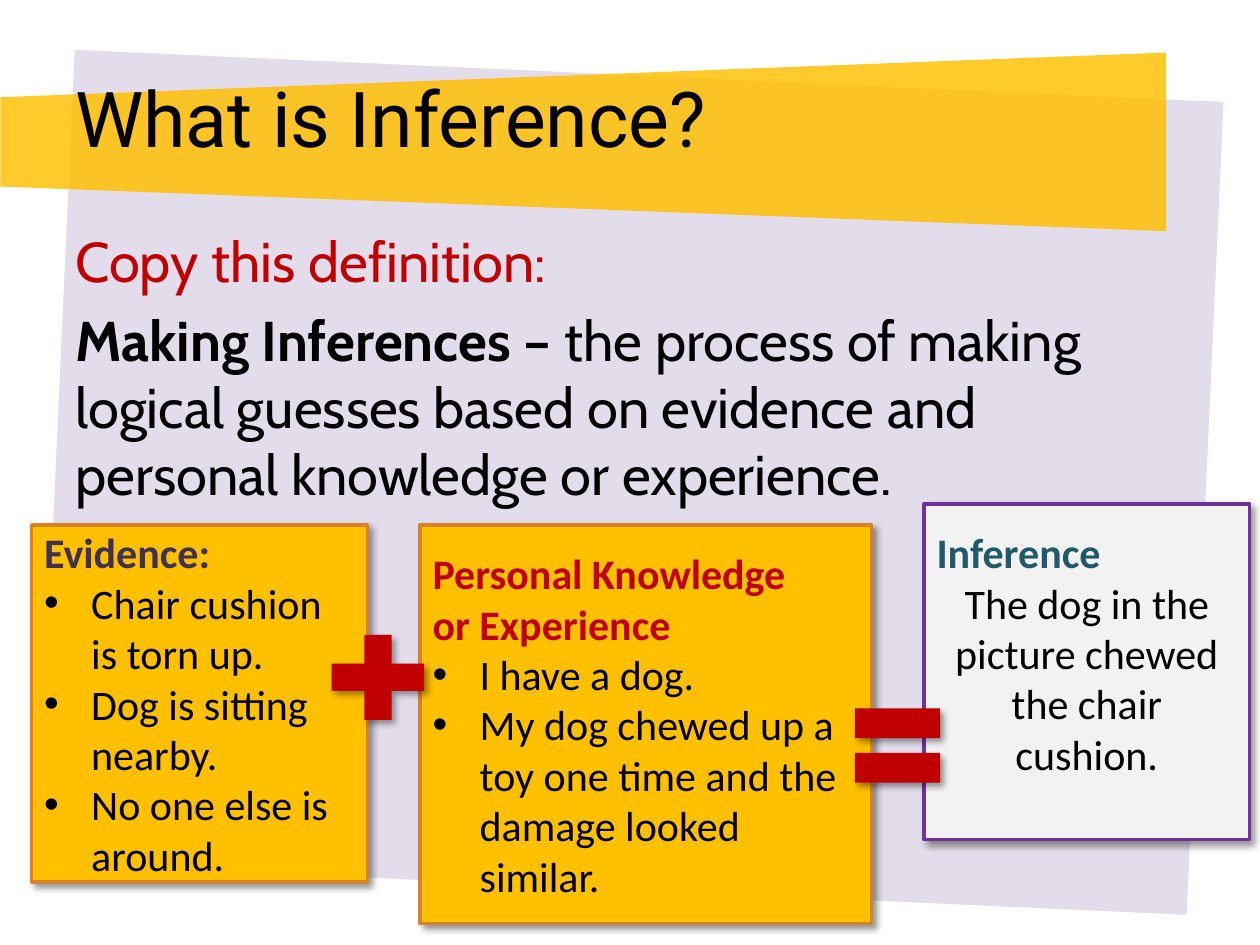
"""Build a slide that defines inference as evidence plus personal knowledge."""
from lxml import etree
from pptx import Presentation
from pptx.dml.color import RGBColor
from pptx.enum import shapes, text
from pptx.oxml import ns
from pptx.util import Cm, Pt

BLACK = RGBColor(0x00, 0x00, 0x00)
WHITE = RGBColor(0xFF, 0xFF, 0xFF)
LILAC = RGBColor(0xCC, 0xC1, 0xDA)
GOLD = RGBColor(0xFF, 0xC0, 0x00)
ORANGE = RGBColor(0xD5, 0x83, 0x29)
RED = RGBColor(0xC0, 0x00, 0x00)
PLUM = RGBColor(0x40, 0x31, 0x52)
PURPLE = RGBColor(0x70, 0x30, 0xA0)
TEAL = RGBColor(0x21, 0x59, 0x68)
PALE = RGBColor(0xF2, 0xF2, 0xF2)

SHAPE = shapes.MSO_SHAPE
LEFT, CENTER = text.PP_ALIGN.LEFT, text.PP_ALIGN.CENTER

TITLE = "What is Inference?"
PROMPT = "Copy this definition:"
TERM = "Making Inferences – "
MEANING = ("the process of making logical guesses based on evidence "
           "and personal knowledge or experience.")
CARDS = [
    dict(place=(0.64, 10.58, 6.77, 7.2), fill=GOLD, line=ORANGE, color=PLUM,
         heading=["Evidence:"], bullets=True, bottom=0.13,
         body=["Chair cushion is torn up.", "Dog is sitting nearby.",
               "No one else is around."]),
    dict(place=(8.47, 10.58, 9.1, 8.04), fill=GOLD, line=ORANGE, color=RED,
         heading=["Personal Knowledge", "or Experience"], bullets=True, bottom=0.13,
         body=["I have a dog.",
               "My dog chewed up a toy one time and the damage looked similar."]),
    dict(place=(18.63, 10.16, 6.56, 6.77), fill=PALE, line=PURPLE, color=TEAL,
         heading=["Inference"], bullets=False, bottom=0.9,
         body=["The dog in the picture chewed the chair cushion."]),
]
SIGNS = [(SHAPE.MATH_PLUS, (6.35, 12.49, 2.54, 2.33)),
         (SHAPE.MATH_EQUAL, (16.93, 13.76, 2.33, 2.54))]


def add_child(parent, tag, **attributes):
    return etree.SubElement(parent, ns.qn(tag), attributes)


def add_figure(page, kind, place, fill, line=None, width=2, opacity=None, shadow=False):
    figure = page.shapes.add_shape(kind, *map(Cm, place))
    figure.shadow.inherit = False
    figure.fill.solid()
    figure.fill.fore_color.rgb = fill
    properties = figure._element.spPr
    if opacity:
        color = properties.find(ns.qn("a:solidFill"))[0]
        add_child(color, "a:alpha", val=str(opacity * 1000))
    if line is None:
        figure.line.fill.background()
    else:
        figure.line.color.rgb = line
        figure.line.width = Pt(width)
    if shadow:
        effect = add_child(properties.find(ns.qn("a:effectLst")), "a:outerShdw",
                           blurRad=str(Pt(4)), dist=str(Pt(3)), dir=str(45 * 60000),
                           algn="tl", rotWithShape="0")
        add_child(add_child(effect, "a:srgbClr", val=str(BLACK)), "a:alpha", val="40000")
    return figure


def add_box(page, place, anchor):
    frame = page.shapes.add_textbox(*map(Cm, place)).text_frame
    frame.word_wrap = True
    frame.vertical_anchor = anchor
    return frame


def set_font(para, name, size, color, bold=False):
    para.font.name = name
    para.font.size = Pt(size)
    para.font.color.rgb = color
    para.font.bold = bold


def add_bullet(para):
    properties = para._p.get_or_add_pPr()
    properties.set("marL", str(Cm(0.95)))
    properties.set("indent", str(Cm(-0.95)))
    add_child(properties, "a:buFont", typeface="Arial")
    add_child(properties, "a:buChar", char="•")


def add_card(page, place, fill, line, color, heading, body, bullets, bottom):
    frame = add_figure(page, SHAPE.RECTANGLE, place, fill, line, shadow=True).text_frame
    frame.word_wrap = True
    frame.vertical_anchor = text.MSO_ANCHOR.MIDDLE
    frame.margin_bottom = Cm(bottom)
    for index, words in enumerate(heading + body):
        para = frame.add_paragraph() if index else frame.paragraphs[0]
        para.text = words
        is_heading = index < len(heading)
        para.alignment = LEFT if is_heading or bullets else CENTER
        if bullets and not is_heading:
            add_bullet(para)
        set_font(para, "Calibri", 24, color if is_heading else BLACK, is_heading)


def main():
    deck = Presentation()
    deck.slide_width, deck.slide_height = Cm(25.4), Cm(19.05)
    page = deck.slides.add_slide(deck.slide_layouts[6])

    panel = add_figure(page, SHAPE.RECTANGLE, (1.07, 1.47, 23.29, 16.51),
                       LILAC, WHITE, width=3, opacity=55)
    panel.rotation = 2.6
    banner = add_figure(page, SHAPE.TRAPEZOID, (9.96, -8.89, 3.6, 23.5), GOLD, opacity=83)
    banner.rotation = 270

    title = add_box(page, (1.27, 0.76, 22.86, 3.18), text.MSO_ANCHOR.MIDDLE).paragraphs[0]
    title.text = TITLE
    set_font(title, "Roboto", 44, BLACK)

    frame = add_box(page, (1.27, 4.45, 22.86, 12.57), text.MSO_ANCHOR.TOP)
    prompt = frame.paragraphs[0]
    prompt.text = PROMPT
    set_font(prompt, "Cabin", 32, RED)
    definition = frame.add_paragraph()
    definition.space_before = Pt(6.4)
    set_font(definition, "Cabin", 32, BLACK)
    for words, bold in ((TERM, True), (MEANING, False)):
        span = definition.add_run()
        span.text = words
        span.font.bold = bold

    for card in CARDS:
        add_card(page, **card)
    for kind, place in SIGNS:
        add_figure(page, kind, place, RED, shadow=True)

    deck.save("out.pptx")


if __name__ == "__main__":
    main()
